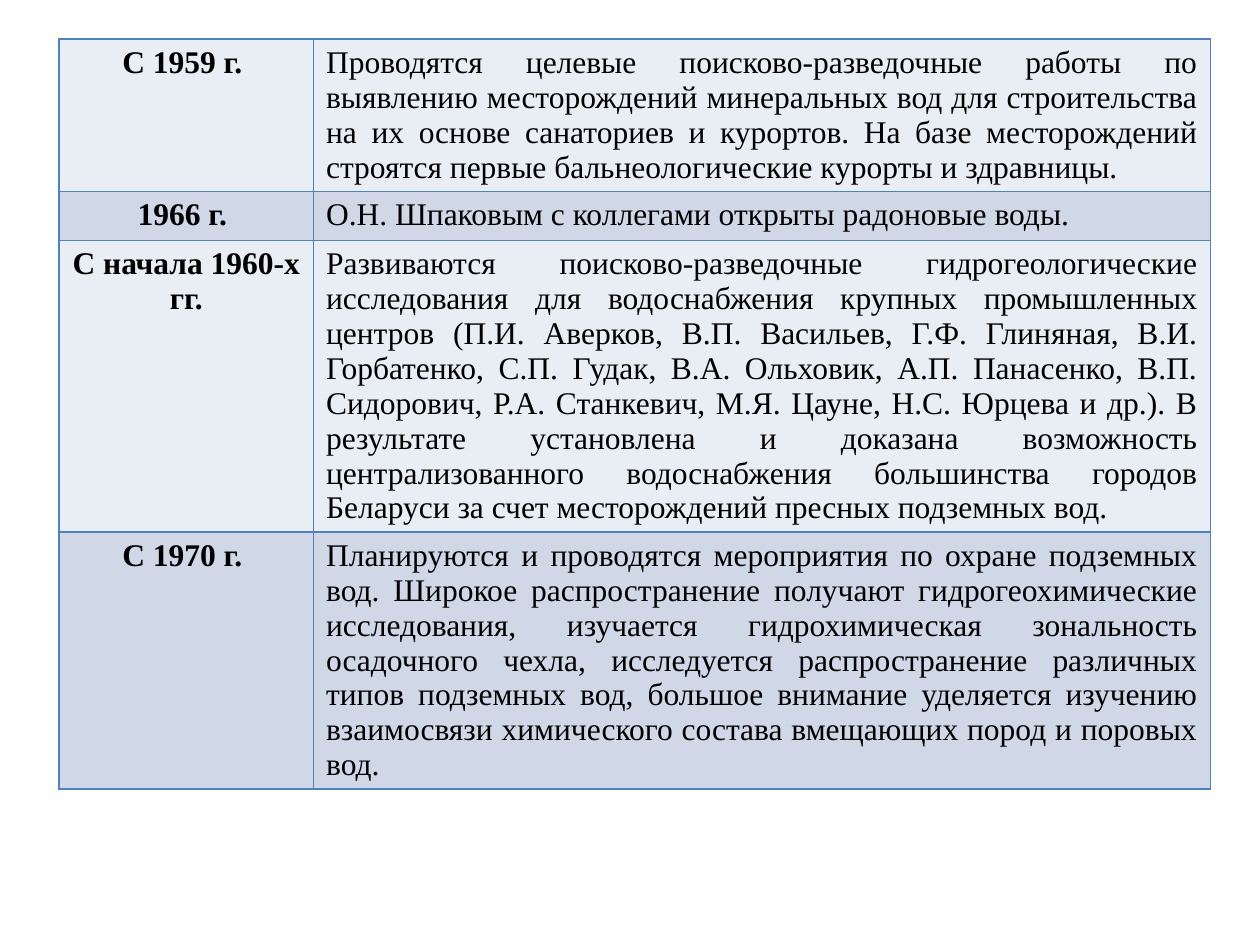
from lxml import etree
from pptx import Presentation
from pptx.dml.color import RGBColor
from pptx.enum.text import PP_ALIGN
from pptx.oxml.ns import qn
from pptx.util import Cm, Pt

CENTER, LEFT, JUSTIFY = PP_ALIGN.CENTER, PP_ALIGN.LEFT, PP_ALIGN.JUSTIFY
FONT = "Times New Roman"
BAND_FILLS = ["E9EDF4", "D0D8E8"]
BORDER = "4F81BD"
COLUMN_WIDTHS = [5.13, 18.08]
TABLE_LEFT, TABLE_TOP, TABLE_HEIGHT = 1.19, 0.79, 16.26

EVENTS = [
    ("С 1959 г. ",
     "Проводятся целевые поисково-разведочные работы по выявлению месторождений "
     "минеральных вод для строительства на их основе санаториев и курортов. "
     "На базе месторождений строятся первые бальнеологические курорты и здравницы.",
     JUSTIFY, 1.19),
    ("1966 г. ",
     "О.Н. Шпаковым с коллегами открыты радоновые воды.",
     LEFT, 0.99),
    ("С начала 1960-х гг.",
     "Развиваются поисково-разведочные гидрогеологические исследования для "
     "водоснабжения крупных промышленных центров (П.И. Аверков, В.П. Васильев, "
     "Г.Ф. Глиняная, В.И. Горбатенко, С.П. Гудак, В.А. Ольховик, А.П. Панасенко, "
     "В.П. Сидорович, Р.А. Станкевич, М.Я. Цауне, Н.С. Юрцева и др.). "
     "В результате установлена и доказана возможность централизованного "
     "водоснабжения большинства городов Беларуси за счет месторождений пресных "
     "подземных вод. ",
     JUSTIFY, 2.57),
    ("С 1970 г. ",
     "Планируются и проводятся мероприятия по охране подземных вод. Широкое "
     "распространение получают гидрогеохимические исследования, изучается "
     "гидрохимическая зональность осадочного чехла, исследуется распространение "
     "различных типов подземных вод, большое внимание уделяется изучению "
     "взаимосвязи химического состава вмещающих пород и поровых вод.",
     JUSTIFY, 1.63),
]


def color(value):
    return RGBColor.from_string(value)


def add_borders(cell):
    properties = cell._tc.get_or_add_tcPr()
    for position, side in enumerate(("a:lnL", "a:lnR", "a:lnT", "a:lnB")):
        line = etree.Element(qn(side), w=str(Pt(1)))
        fill = etree.SubElement(line, qn("a:solidFill"))
        etree.SubElement(fill, qn("a:srgbClr"), val=BORDER)
        properties.insert(position, line)


def fill_cell(cell, text, alignment, bold, background):
    cell.fill.solid()
    cell.fill.fore_color.rgb = color(background)
    add_borders(cell)
    para = cell.text_frame.paragraphs[0]
    para.alignment = alignment
    span = para.add_run()
    span.text = text
    span.font.name = FONT
    span.font.size = Pt(18)
    span.font.bold = bold
    span.font.color.rgb = color("000000")


def main():
    deck = Presentation()
    deck.slide_width, deck.slide_height = Cm(25.4), Cm(19.05)
    page = deck.slides.add_slide(deck.slide_layouts[6])
    frame = page.shapes.add_table(
        len(EVENTS), len(COLUMN_WIDTHS), Cm(TABLE_LEFT), Cm(TABLE_TOP),
        Cm(sum(COLUMN_WIDTHS)), Cm(TABLE_HEIGHT))
    table = frame.table
    table.first_row = False
    for column, width in zip(table.columns, COLUMN_WIDTHS):
        column.width = Cm(width)
    for index, (period, event, alignment, height) in enumerate(EVENTS):
        table.rows[index].height = Cm(height)
        background = BAND_FILLS[index % len(BAND_FILLS)]
        fill_cell(table.cell(index, 0), period, CENTER, True, background)
        fill_cell(table.cell(index, 1), event, alignment, False, background)
    frame.height = Cm(TABLE_HEIGHT)
    deck.save("out.pptx")


if __name__ == "__main__":
    main()
